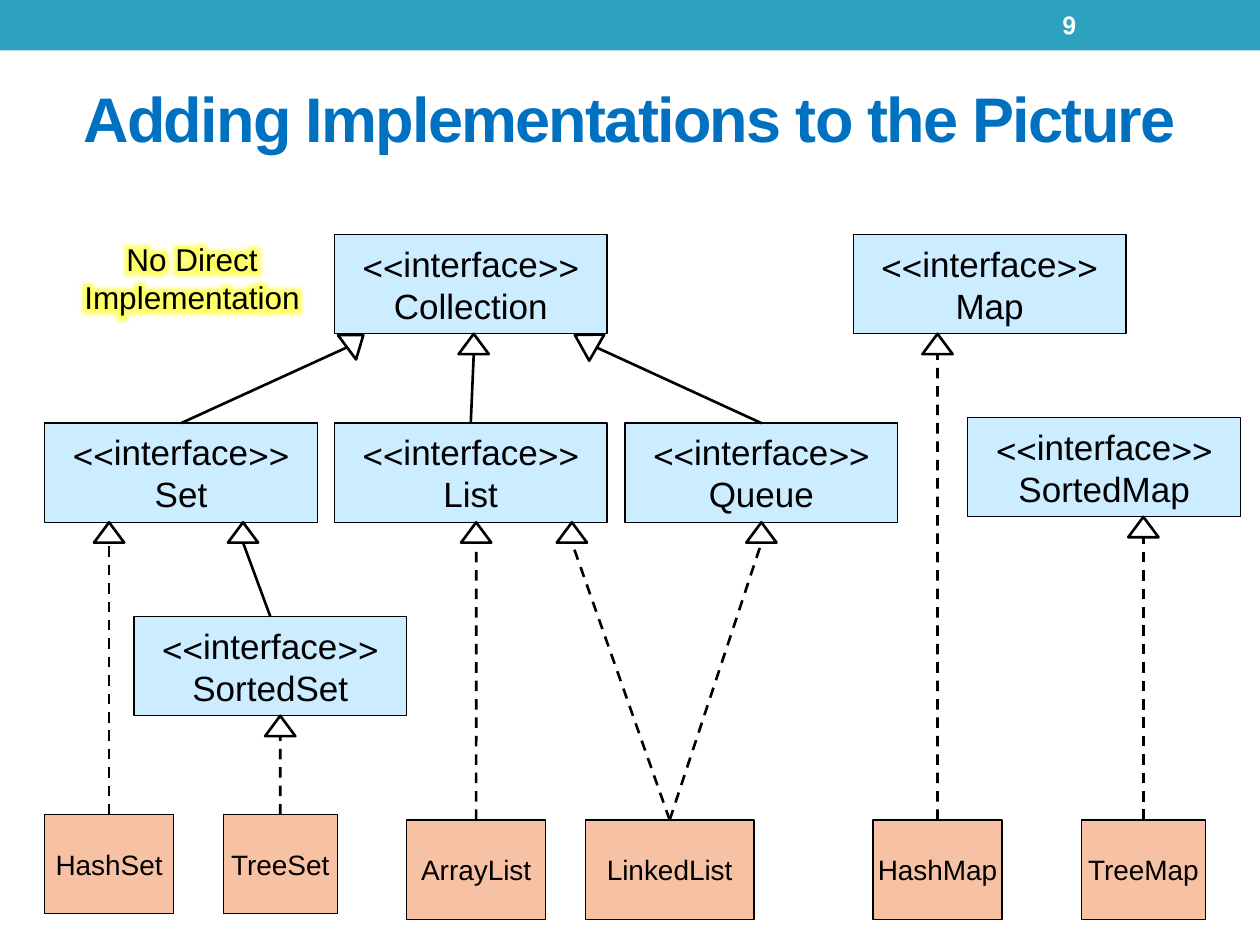
from math import cos, radians, sin

from lxml.etree import SubElement
from pptx import Presentation
from pptx.dml.color import RGBColor
from pptx.enum.dml import MSO_LINE_DASH_STYLE as Dash
from pptx.enum.shapes import MSO_CONNECTOR as Conn, MSO_SHAPE as Shape
from pptx.enum.text import MSO_ANCHOR as Anchor, PP_ALIGN as Align
from pptx.oxml.ns import qn
from pptx.util import Cm, Pt

THEME = {
    "font": "Arial",
    "bar": "2DA2BF", "title": "0070C0", "interface": "CCECFF", "class": "F7C1A4",
    "ink": "000000", "paper": "FFFFFF", "glow": "FFFF00",
    "title_pt": 36, "interface_pt": 20, "note_pt": 18, "class_pt": 16, "number_pt": 14,
    "border_pt": 0.75, "link_pt": 1.5, "glow_pt": 18,
}

TITLE = "Adding Implementations to the Picture"
NOTE = "No Direct Implementation"
NUMBER = "9"

# All positions below are in centimetres.
BOX_H = 2
INTERFACE_W = 5.5
HEAD_W, HEAD_H = 0.61, 0.41

# name: (left, top)
INTERFACES = {
    "Collection": (6.74, 4.73),
    "Map": (17.2, 4.73),
    "Set": (0.9, 8.53),
    "List": (6.74, 8.53),
    "Queue": (12.6, 8.53),
    "SortedMap": (19.51, 8.42),
    "SortedSet": (2.7, 12.43),
}
# name: (left, top, width)
CLASSES = {
    "HashSet": (0.9, 16.42, 2.6),
    "TreeSet": (4.5, 16.42, 2.3),
    "ArrayList": (8.2, 16.53, 2.8),
    "LinkedList": (11.8, 16.53, 3.4),
    "HashMap": (17.6, 16.53, 2.6),
    "TreeMap": (21.8, 16.53, 2.5),
}
# (child, parent, x of arrowhead centre, arrowhead rotation, arrowhead height)
LINKS = [
    ("Set", "Collection", 7.16, 53.3, HEAD_H),
    ("List", "Collection", 9.55, 0, HEAD_H),
    ("Queue", "Collection", 11.81, 299.9, 0.51),
    ("SortedSet", "Set", 4.9, 0, HEAD_H),
    ("HashSet", "Set", 2.2, 0, HEAD_H),
    ("TreeSet", "SortedSet", 5.65, 0, HEAD_H),
    ("ArrayList", "List", 9.6, 0, HEAD_H),
    ("LinkedList", "List", 11.53, 0, HEAD_H),
    ("LinkedList", "Queue", 15.35, 0, HEAD_H),
    ("HashMap", "Map", 18.9, 0, HEAD_H),
    ("TreeMap", "SortedMap", 23.05, 0, HEAD_H),
]


def color(name):
    return RGBColor.from_string(THEME[name])


def write(sp, text, size, ink="ink", bold=False, align=Align.CENTER, anchor=Anchor.MIDDLE, wrap=True):
    """Set right-to-left paragraphs in one style and return the first run."""
    tf = sp.text_frame
    tf.text = text
    tf.word_wrap = wrap
    tf.vertical_anchor = anchor
    for p in tf.paragraphs:
        p.alignment = align
        p._p.get_or_add_pPr().set("rtl", "1")
        for r in p.runs:
            r.font.name = THEME["font"]
            r.font.size = Pt(THEME[size])
            r.font.bold = bold
            r.font.color.rgb = color(ink)
    return tf.paragraphs[0].runs[0]


def add_glow(r):
    effects = SubElement(r.font._element, qn("a:effectLst"))
    r.font._element.find(qn("a:solidFill")).addnext(effects)
    glow = SubElement(effects, qn("a:glow"), rad=str(Pt(THEME["glow_pt"])))
    rgb = SubElement(glow, qn("a:srgbClr"), val=THEME["glow"])
    SubElement(rgb, qn("a:alpha"), val="60000")


def add_shape(slide, kind, left, top, width, height, fill=None, line_pt=None):
    sp = slide.shapes.add_shape(kind, Cm(left), Cm(top), Cm(width), Cm(height))
    sp.shadow.inherit = False
    if fill:
        sp.fill.solid()
        sp.fill.fore_color.rgb = color(fill)
    else:
        sp.fill.background()
    if line_pt:
        sp.line.width = Pt(THEME[line_pt])
        sp.line.color.rgb = color("ink")
    else:
        sp.line.fill.background()
    return sp


def add_box(slide, kind, text, left, top, width):
    sp = add_shape(slide, Shape.FLOWCHART_PROCESS, left, top, width, BOX_H, kind, "border_pt")
    write(sp, text, kind + "_pt", wrap=False)
    return sp


def add_link(slide, child, parent, x, rotation, height, dashed):
    """Join the child's top to the base of a hollow arrowhead below the parent."""
    bottom = (parent.top + parent.height) / Cm(1)
    y = bottom + (0.15 if rotation else height / 2)
    head = add_shape(slide, Shape.FLOWCHART_EXTRACT, x - HEAD_W / 2, y - height / 2,
                     HEAD_W, height, line_pt="link_pt")
    head.rotation = rotation
    angle = radians(rotation)
    base_x = x - sin(angle) * height / 2
    base_y = y + cos(angle) * height / 2
    line = slide.shapes.add_connector(Conn.STRAIGHT, 0, 0, Cm(base_x), Cm(base_y))
    line.begin_connect(child, 0)
    line.line.width = Pt(THEME["link_pt"])
    line.line.color.rgb = color("ink")
    if dashed:
        line.line.dash_style = Dash.DASH
    SubElement(line._element.spPr, qn("a:effectLst"))


def main():
    prs = Presentation()
    prs.slide_width, prs.slide_height = Cm(25.4), Cm(19.05)
    slide = prs.slides.add_slide(prs.slide_layouts[5])

    add_shape(slide, Shape.RECTANGLE, 0, 0, 25.4, 1.02, "bar")

    title = slide.shapes.title
    title.left, title.top, title.width, title.height = Cm(1.14), Cm(0.78), Cm(23.11), Cm(3.18)
    r = write(title, TITLE, "title_pt", "title", bold=True)
    r.font._element.set("spc", "-100")

    number = slide.shapes.add_textbox(Cm(21.17), Cm(0.05), Cm(2.97), Cm(0.91))
    write(number, NUMBER, "number_pt", "paper", bold=True, align=Align.LEFT)

    note = slide.shapes.add_textbox(Cm(1.43), Cm(4.72), Cm(4.88), Cm(1.78))
    add_glow(write(note, NOTE, "note_pt", anchor=Anchor.TOP))

    boxes = {}
    for name, (left, top) in INTERFACES.items():
        boxes[name] = add_box(slide, "interface", "<<interface>>\n" + name, left, top, INTERFACE_W)
    for name, (left, top, width) in CLASSES.items():
        boxes[name] = add_box(slide, "class", name, left, top, width)

    for child, parent, x, rotation, height in LINKS:
        add_link(slide, boxes[child], boxes[parent], x, rotation, height, child in CLASSES)

    prs.save("out.pptx")


if __name__ == "__main__":
    main()
